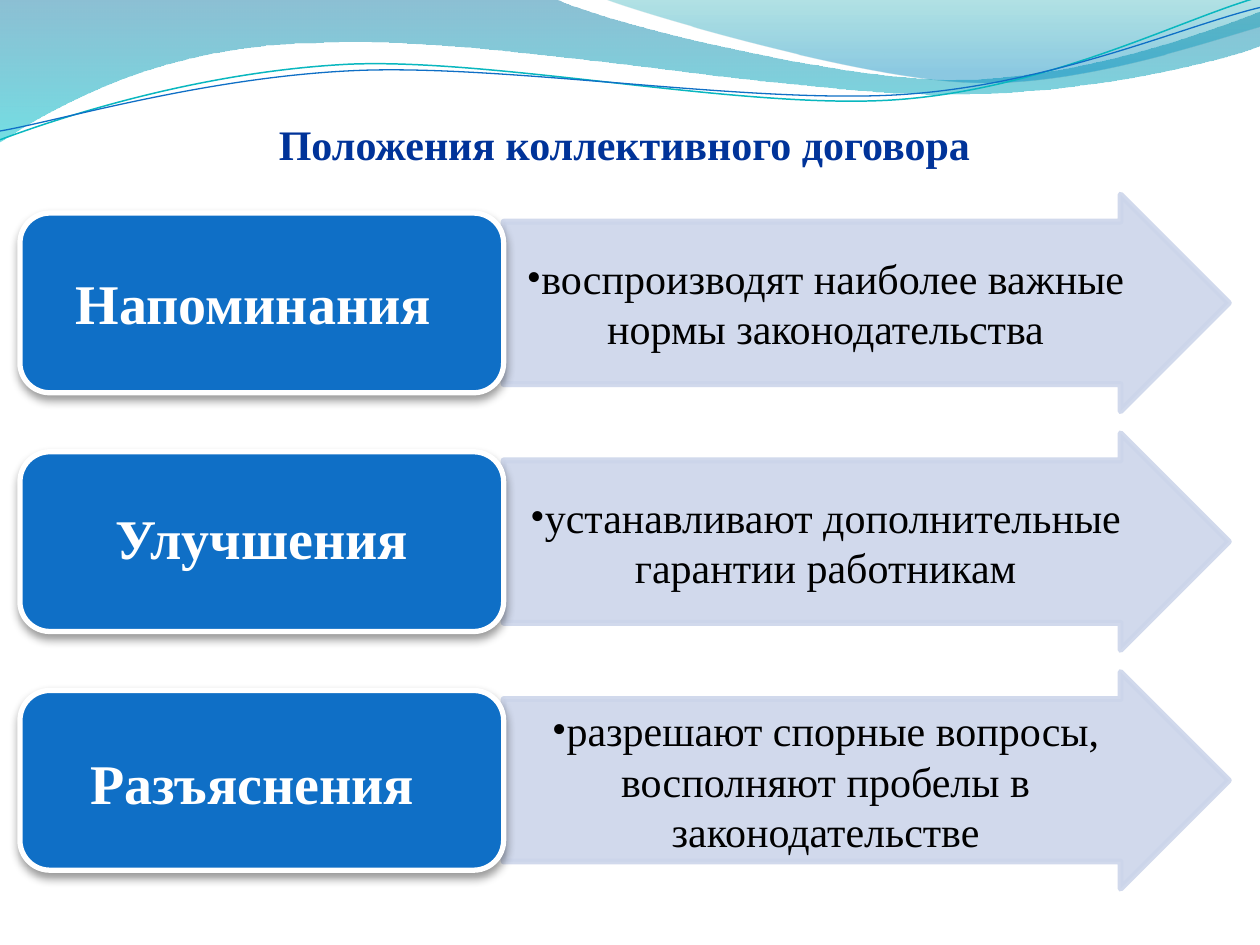
from dataclasses import dataclass
from math import cos, radians, sin
from typing import NamedTuple

from lxml.etree import SubElement
from pptx import Presentation
from pptx.dml.color import RGBColor
from pptx.enum.shapes import MSO_SHAPE
from pptx.enum.text import MSO_ANCHOR, MSO_AUTO_SIZE, PP_ALIGN
from pptx.oxml.ns import qn
from pptx.util import Pt


@dataclass(frozen=True)
class Theme:
    font: str = "Times New Roman"
    title: str = "003399"
    box: str = "0F6FC6"
    white: str = "FFFFFF"
    black: str = "000000"
    arrow: str = "CCD5EA"
    teal: str = "09B7BF"
    body_size: float = 24
    label_size: float = 32


class Stop(NamedTuple):
    position: float
    color: str
    opacity: int


class Wave(NamedTuple):
    start: tuple
    segments: list  # one point for a line, three for a Bezier curve
    stops: tuple = ()
    color: str = ""
    width: float = 0
    center: tuple = (0, 0)
    rotation: float = 0


class Provision(NamedTuple):
    label: str
    text: str
    space_size: float = 0  # size of the space that ends the label


THEME = Theme()
ARROW_LEFT, ARROW_TOP, ARROW_WIDTH, ARROW_HEIGHT = 287.8, 111.2, 414.4, 123.8
BOX_LEFT, BOX_WIDTH, BOX_HEIGHT = 11.4, 276.4, 102.7
ROW_STEP = 136.4

WAVES = [
    Wave((0, 0), [
        [(317, -0.7)],
        [(342.7, 12.2), (477.4, 45.4), (545.8, 45.4)],
        [(614.2, 45.4), (689.8, 18.7), (720, 6.5)],
        [(720.7, 25.9)],
        [(707.8, 31.7), (626.4, 54.7), (537.1, 54)],
        [(447.8, 54), (275, 20.2), (185, 24.5)],
        [(92.9, 25.2), (33.1, 59.8), (-0.7, 81.4)],
    ], stops=(Stop(0, "0074A0", 45), Stop(1, "00C4CD", 55))),
    Wave((344.9, -0.7), [
        [(366.5, 7.9), (491, 44.6), (553.7, 46.8)],
        [(615.6, 49.7), (691.9, 23), (720, 15.1)],
        [(720, 0)],
    ], stops=(Stop(0, "00A0A8", 30), Stop(0.8, "008ABF", 45))),
    Wave((0, 79.9), [
        [(34.6, 67), (113.8, 41), (199.4, 36.7)],
        [(284.4, 33.1), (427, 63.4), (513.4, 56.9)],
        [(599.8, 50.4), (675.4, 10.8), (718.6, -1.4)],
    ], color=THEME.teal, width=0.85, center=(359.3, 41.4), rotation=-2.7),
    Wave((0, 74.9), [
        [(33.8, 69.1), (118.1, 43.9), (203.8, 40.3)],
        [(290.2, 36.7), (429.8, 59.8), (516.2, 54)],
        [(601.9, 48.2), (677.5, 14.4), (720, 4.3)],
    ], color=THEME.box, width=0.75, center=(359.6, 42.5), rotation=-2.7),
]

PROVISIONS = [
    Provision("Напоминания", "воспроизводят наиболее важные нормы законодательства", 38),
    Provision("Улучшения", "устанавливают дополнительные гарантии работникам"),
    Provision("Разъяснения", "разрешают спорные вопросы, восполняют пробелы в законодательстве", 42),
]


def set_opacity(color_element, percent: int) -> None:
    SubElement(color_element, qn("a:alpha"), val=str(percent * 1000))


def level_point(wave: Wave, point: tuple) -> tuple:
    """Where a point lies before the wave is rotated about its center."""
    angle = radians(-wave.rotation)
    (cx, cy), (x, y) = wave.center, point
    dx, dy = x - cx, y - cy
    return (Pt(cx + dx * cos(angle) - dy * sin(angle)),
            Pt(cy + dx * sin(angle) + dy * cos(angle)))


def bend_segments(ribbon, segments: list) -> None:
    """Join each three straight steps of a curved segment into one Bezier curve."""
    steps = iter(list(ribbon._element.spPr.iter(qn("a:lnTo"))))
    for segment in segments:
        group = [next(steps) for _ in segment]
        if len(group) == 1:
            continue
        outline = group[0].getparent()
        curve = outline.makeelement(qn("a:cubicBezTo"))
        group[0].addprevious(curve)
        for step in group:
            curve.append(step[0])
            outline.remove(step)


def draw_wave(slide, wave: Wave) -> None:
    builder = slide.shapes.build_freeform(*level_point(wave, wave.start))
    points = [level_point(wave, point) for segment in wave.segments for point in segment]
    builder.add_line_segments(points, close=bool(wave.stops))
    ribbon = builder.convert_to_shape()
    bend_segments(ribbon, wave.segments)
    ribbon.rotation = wave.rotation
    ribbon.shadow.inherit = False
    if not wave.stops:
        ribbon.fill.background()
        ribbon.line.color.rgb = RGBColor.from_string(wave.color)
        ribbon.line.width = Pt(wave.width)
        return
    ribbon.line.fill.background()
    ribbon.fill.gradient()
    ribbon.fill.gradient_angle = 270
    for target, stop in zip(ribbon.fill.gradient_stops, wave.stops):
        target.position = stop.position
        target.color.rgb = RGBColor.from_string(stop.color)
    for color, stop in zip(ribbon._element.spPr.iter(qn("a:srgbClr")), wave.stops):
        set_opacity(color, stop.opacity)


def add_run(paragraph, text: str, size: float, color: str, bold: bool = False) -> None:
    run = paragraph.add_run()
    run.text = text
    run.font.name = THEME.font
    run.font.size = Pt(size)
    run.font.bold = bold
    run.font.color.rgb = RGBColor.from_string(color)


def set_frame(frame, anchor, left: float, top: float, right: float, bottom: float):
    """Prepare a text frame and return its centred first paragraph."""
    frame.word_wrap = True
    frame.auto_size = MSO_AUTO_SIZE.NONE
    frame.vertical_anchor = anchor
    frame.margin_left, frame.margin_top = Pt(left), Pt(top)
    frame.margin_right, frame.margin_bottom = Pt(right), Pt(bottom)
    paragraph = frame.paragraphs[0]
    paragraph.alignment = PP_ALIGN.CENTER
    return paragraph


def add_block(slide, kind, left: float, top: float, width: float, height: float,
              fill: str, line: str, line_width: float):
    block = slide.shapes.add_shape(kind, Pt(left), Pt(top), Pt(width), Pt(height))
    block.shadow.inherit = False
    block.fill.solid()
    block.fill.fore_color.rgb = RGBColor.from_string(fill)
    block.line.color.rgb = RGBColor.from_string(line)
    block.line.width = Pt(line_width)
    return block


def draw_arrow(slide, provision: Provision, top: float) -> None:
    arrow = add_block(slide, MSO_SHAPE.RIGHT_ARROW, ARROW_LEFT, top, ARROW_WIDTH,
                      ARROW_HEIGHT, THEME.arrow, THEME.arrow, 3.35)
    arrow.adjustments[0], arrow.adjustments[1] = 0.75, 0.5
    for color in arrow._element.spPr.iter(qn("a:srgbClr")):
        set_opacity(color, 90)
    paragraph = set_frame(arrow.text_frame, MSO_ANCHOR.MIDDLE, 1.2, 1.2, 1.2, 1.2)
    properties = paragraph._p.get_or_add_pPr()
    properties.set("marL", "0")
    properties.set("indent", "0")
    SubElement(properties, qn("a:buFont"), typeface=THEME.font)
    SubElement(properties, qn("a:buChar"), char="•")
    add_run(paragraph, provision.text, THEME.body_size, THEME.black)


def draw_box(slide, provision: Provision, top: float) -> None:
    box = add_block(slide, MSO_SHAPE.ROUNDED_RECTANGLE, BOX_LEFT, top, BOX_WIDTH,
                    BOX_HEIGHT, THEME.box, THEME.white, 3)
    effects = box._element.spPr.find(qn("a:effectLst"))
    shadow = SubElement(effects, qn("a:outerShdw"), blurRad=str(Pt(5.2)), dist=str(Pt(3)),
                        dir="5400000", rotWithShape="0")
    set_opacity(SubElement(shadow, qn("a:srgbClr"), val=THEME.black), 40)
    paragraph = set_frame(box.text_frame, MSO_ANCHOR.MIDDLE, 9.6, 4.8, 9.6, 4.8)
    paragraph.line_spacing = 0.9
    add_run(paragraph, provision.label, THEME.label_size, THEME.white, bold=True)
    if provision.space_size:
        add_run(paragraph, " ", provision.space_size, THEME.white)


def main() -> None:
    presentation = Presentation()
    presentation.slide_width, presentation.slide_height = Pt(720), Pt(540)
    slide = presentation.slides.add_slide(presentation.slide_layouts[5])
    # Decorative waves, kept behind the title
    for wave in WAVES:
        draw_wave(slide, wave)
    # Title
    title = slide.shapes.title
    slide.shapes._spTree.append(title._element)
    title.left, title.top, title.width, title.height = Pt(92.9), Pt(56.9), Pt(527.8), Pt(39.6)
    heading = set_frame(title.text_frame, MSO_ANCHOR.BOTTOM, 0, 3.6, 0, 0)
    add_run(heading, "Положения коллективного договора", THEME.body_size, THEME.title, bold=True)
    # Rows: an arrow with the meaning, a box with the kind of provision
    for row, provision in enumerate(PROVISIONS):
        top = ARROW_TOP + row * ROW_STEP
        draw_arrow(slide, provision, top)
        draw_box(slide, provision, top + (ARROW_HEIGHT - BOX_HEIGHT) / 2)
    presentation.save("out.pptx")


if __name__ == "__main__":
    main()
